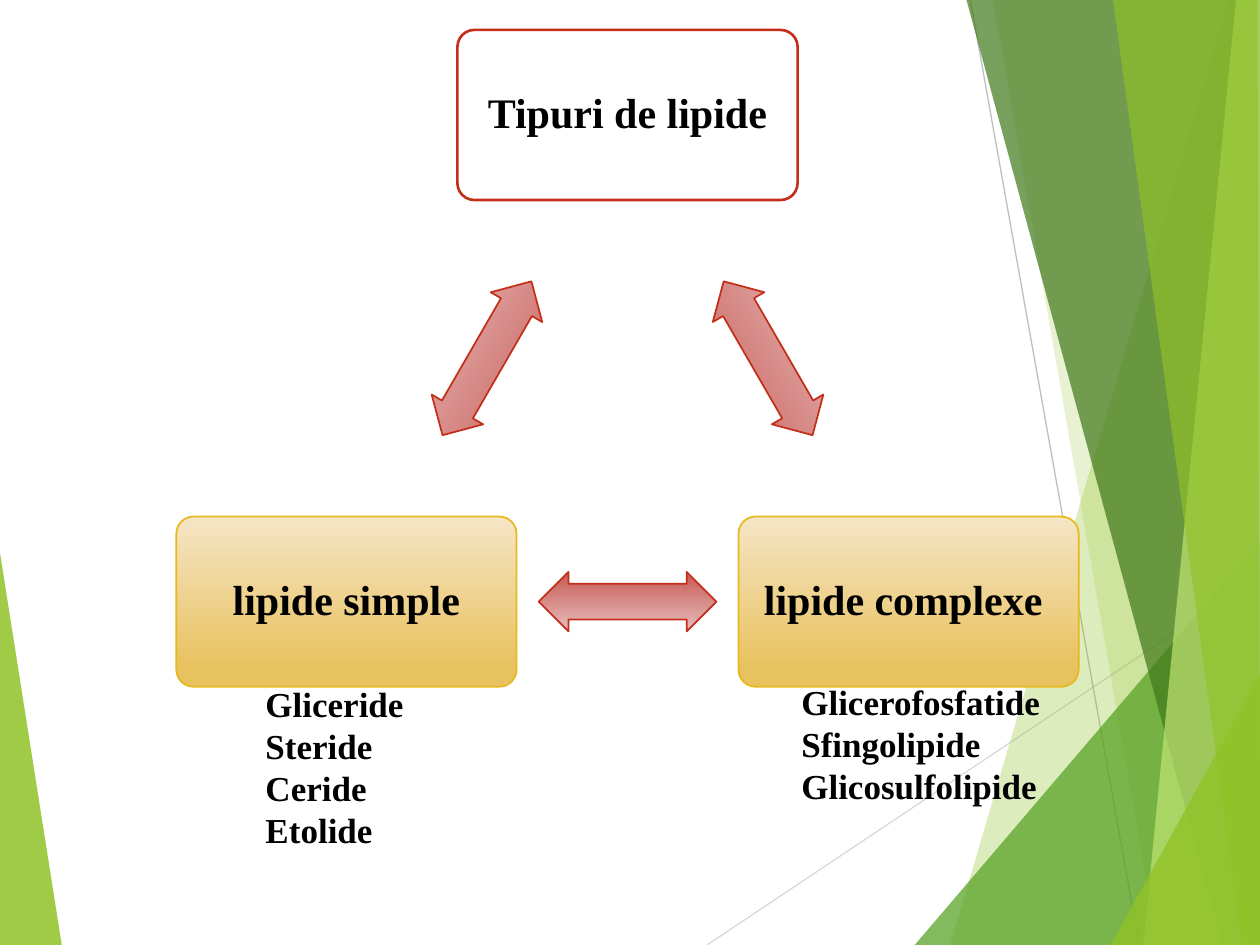
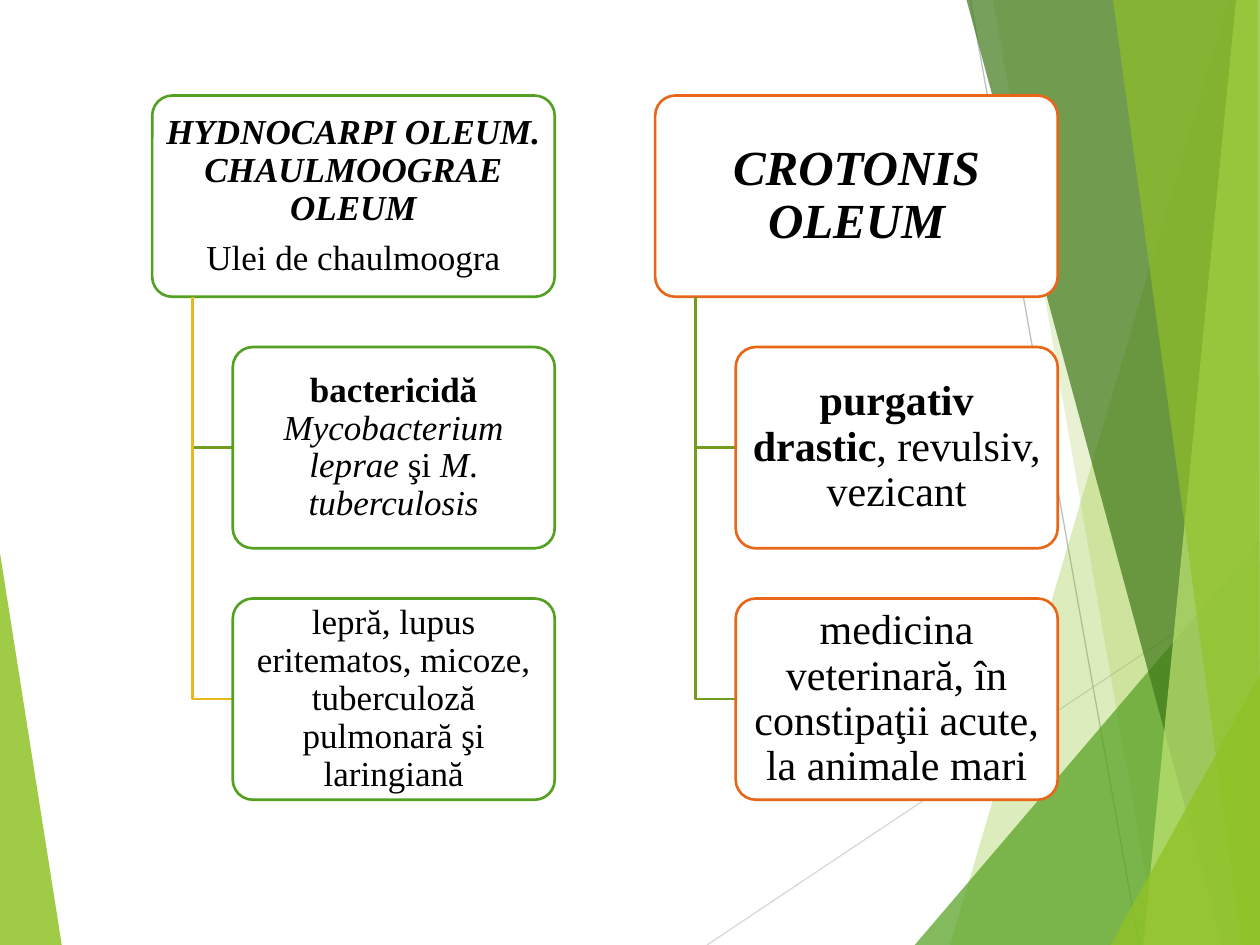
from lxml.etree import SubElement
from pptx import Presentation
from pptx.dml.color import RGBColor
from pptx.enum.shapes import MSO_CONNECTOR, MSO_SHAPE
from pptx.enum.text import MSO_ANCHOR, MSO_AUTO_SIZE, PP_ALIGN
from pptx.oxml.ns import qn
from pptx.util import Pt

FONT = "Times New Roman"
BLACK = RGBColor(0x00, 0x00, 0x00)
WHITE = RGBColor(0xFF, 0xFF, 0xFF)
LIME = RGBColor(0x90, 0xC2, 0x26)
PALE_LIME = RGBColor(0xC0, 0xE4, 0x74)
GREEN = RGBColor(0x54, 0xA0, 0x21)
DARK_GREEN = RGBColor(0x3F, 0x78, 0x19)
OLIVE = RGBColor(0x73, 0x9B, 0x1E)
ORANGE = RGBColor(0xE7, 0x66, 0x18)
RED = RGBColor(0xC4, 0x2F, 0x1A)
GOLD = RGBColor(0xE6, 0xB9, 0x1E)
LIGHT_GRAY = RGBColor(0xD9, 0xD9, 0xD9)
GRAY = RGBColor(0xBF, 0xBF, 0xBF)
SAND_GRADIENT = (RGBColor(0xF5, 0xE5, 0xC5), RGBColor(0xE9, 0xC2, 0x60))
ROSE_GRADIENT = (RGBColor(0xE6, 0xBF, 0xBE), RGBColor(0xCB, 0x65, 0x60))

# Shared background: rays (start, end, colour) and facets (colour, opacity %, corners)
WIDTH, HEIGHT = 720, 540
RAYS = [
    ((404, HEIGHT), (WIDTH, 329), LIGHT_GRAY),
    ((554.5, 0), (651, HEIGHT), GRAY),
]
FACETS = [
    (LIME, 85, [(0, 316), (35.3, HEIGHT), (0, HEIGHT)]),
    (LIME, 30, [(702, 0), (543, HEIGHT), (WIDTH, HEIGHT), (WIDTH, 0)]),
    (LIME, 20, [(567.5, 0), (661.5, HEIGHT), (WIDTH, HEIGHT), (WIDTH, 0)]),
    (GREEN, 72, [(522.7, HEIGHT), (WIDTH, 309), (WIDTH, HEIGHT)]),
    (DARK_GREEN, 70, [(552.3, 0), (698.5, HEIGHT), (WIDTH, HEIGHT), (WIDTH, 0)]),
    (PALE_LIME, 70, [(706.3, 0), (653.3, HEIGHT), (WIDTH, HEIGHT), (WIDTH, 0)]),
    (LIME, 65, [(636, 0), (709.7, HEIGHT), (WIDTH, HEIGHT), (718.6, 0)]),
    (LIME, 80, [(634.7, HEIGHT), (WIDTH, 385.5), (WIDTH, HEIGHT)]),
]

# Lipid types: two lists below a triangle of boxes
TITLE = "Tipuri de lipide"
SIMPLE, COMPLEX = "lipide simple", "lipide complexe "
SIMPLE_LIST = ["Gliceride", "Steride", "Ceride", "Etolide"]
COMPLEX_LIST = ["Glicerofosfatide", "Sfingolipide", "Glicosulfolipide"]

# Oils: each box holds paragraphs of (text, style), style from "b" and "i"
OILS = [
    {"colour": GREEN, "links": (OLIVE, GOLD), "boxes": [
        (20, [[("HYDNOCARPI OLEUM. CHAULMOOGRAE OLEUM", "bi")],
              [("Ulei de chaulmoogra", "")]]),
        (20, [[("bactericidă ", "b"), ("Mycobacterium leprae", "i"), (" şi ", ""),
               ("M", "i"), (". ", ""), ("tuberculosis", "i")]]),
        (20, [[("lepră, lupus eritematos, micoze, tuberculoză pulmonară "
                "şi laringiană", "")]]),
    ]},
    {"colour": ORANGE, "links": (OLIVE, OLIVE), "boxes": [
        (28, [[("CROTONIS OLEUM", "bi")]]),
        (24, [[("purgativ drastic", "b"), (", revulsiv, vezicant", "")]]),
        (24, [[("medicina veterinară, în constipaţii acute, la animale mari", "")]]),
    ]},
]


def add_path(page, points, close):
    (x, y), *others = [(Pt(x), Pt(y)) for x, y in points]
    builder = page.shapes.build_freeform(x, y, scale=1.0)
    builder.add_line_segments(others, close=close)
    shape = builder.convert_to_shape()
    shape.shadow.inherit = False
    return shape


def add_background(page, master):
    """Draw the rays and facets, then hand them to the master."""
    parts = []
    for start, end, colour in RAYS:
        ray = page.shapes.add_connector(
            MSO_CONNECTOR.STRAIGHT, *[Pt(value) for value in start + end])
        ray.line.color.rgb = colour
        ray.line.width = Pt(0.75)
        SubElement(ray.element.spPr, qn("a:effectLst"))
        parts.append(ray)
    for colour, opacity, corners in FACETS:
        facet = add_path(page, corners, close=True)
        facet.fill.solid()
        facet.fill.fore_color.rgb = colour
        tint = facet.element.spPr.find(".//" + qn("a:srgbClr"))
        SubElement(tint, qn("a:alpha"), val=str(opacity * 1000))
        facet.line.fill.background()
        parts.append(facet)
    # The left facet lies behind the rays
    parts.insert(0, parts.pop(len(RAYS)))
    for part in parts:
        master.shapes.element.append(part.element)


def add_block(page, kind, left, top, width, height, adjustments, line, weight,
              gradient=None):
    shape = page.shapes.add_shape(kind, Pt(left), Pt(top), Pt(width), Pt(height))
    for index, value in enumerate(adjustments):
        shape.adjustments[index] = value
    shape.shadow.inherit = False
    shape.line.color.rgb = line
    shape.line.width = Pt(weight)
    if gradient:
        shape.fill.gradient()
        shape.fill.gradient_angle = 270
        for stop, colour, position in zip(shape.fill.gradient_stops, gradient, (0, 0.88)):
            stop.color.rgb = colour
            stop.position = position
    else:
        shape.fill.solid()
        shape.fill.fore_color.rgb = WHITE
    return shape


def write(shape, paragraphs, size, margins, align=PP_ALIGN.CENTER,
          anchor=MSO_ANCHOR.MIDDLE, spacing=0.9, gap=0):
    frame = shape.text_frame
    frame.word_wrap = True
    frame.auto_size = MSO_AUTO_SIZE.NONE
    frame.vertical_anchor = anchor
    frame.margin_left = frame.margin_right = Pt(margins[0])
    frame.margin_top = frame.margin_bottom = Pt(margins[1])
    for number, spans in enumerate(paragraphs):
        para = frame.paragraphs[0] if number == 0 else frame.add_paragraph()
        para.alignment = align
        para.line_spacing = spacing
        para.space_before = Pt(gap if number else 0)
        para.font.name = FONT
        para.font.size = Pt(size)
        para.font.color.rgb = BLACK
        for text, style in spans:
            span = para.add_run()
            span.text = text
            span.font.name = FONT
            span.font.size = Pt(size)
            span.font.color.rgb = BLACK
            span.font.bold = "b" in style
            span.font.italic = "i" in style


def place(page, holder, left, top, width, height):
    """Move a placeholder and bring it to the front."""
    holder.left, holder.top = Pt(left), Pt(top)
    holder.width, holder.height = Pt(width), Pt(height)
    page.shapes.element.append(holder.element)


def build_types(page):
    box_width, box_height = 194.4, 97.2
    top, right, left = (358.6, 65.7), (519.2, 343.8), (198, 343.8)

    # Boxes at the corners of the triangle
    for (x, y), text, line, weight, gradient in [
            (top, None, RED, 1.5, None),
            (right, COMPLEX, GOLD, 1, SAND_GRADIENT),
            (left, SIMPLE, GOLD, 1, SAND_GRADIENT)]:
        box = add_block(page, MSO_SHAPE.ROUNDED_RECTANGLE, x - box_width / 2,
                        y - box_height / 2, box_width, box_height, [0.1],
                        line, weight, gradient)
        if text:
            write(box, [[(text, "b")]], 24, (7.2, 7.2))

    # Arrows halfway between corners
    arrow_width, arrow_height = 101.5, 34
    for start, end, angle in [(top, right, 60), (right, left, 180), (left, top, 300)]:
        x, y = [(a + b) / 2 for a, b in zip(start, end)]
        arrow = add_block(page, MSO_SHAPE.LEFT_RIGHT_ARROW, x - arrow_width / 2,
                          y - arrow_height / 2, arrow_width, arrow_height,
                          [0.6, 0.5], RED, 1, ROSE_GRADIENT)
        arrow.rotation = angle

    # Title and lists
    title = page.shapes.title
    place(page, title, top[0] - box_width / 2, top[1] - box_height / 2,
          box_width, box_height)
    write(title, [[(TITLE, "b")]], 24, (7.2, 7.2))
    for index, items, x, y, width in [(1, SIMPLE_LIST, 144.5, 386.6, 100),
                                      (2, COMPLEX_LIST, 450.7, 385, 165)]:
        body = page.placeholders[index]
        place(page, body, x, y, width, 24 * len(items) + 8)
        write(body, [[(item, "b")] for item in items], 20, (7.2, 3.6),
              PP_ALIGN.LEFT, MSO_ANCHOR.TOP, spacing=1.0)
        for para in body.text_frame.paragraphs:
            settings = para._p.get_or_add_pPr()
            settings.set("marL", "0")
            settings.set("indent", "0")
            SubElement(settings, qn("a:buNone"))
            # Bullet settings come before the default run settings
            settings.append(settings.find(qn("a:defRPr")))


def build_oils(page):
    first_left, first_top, column_step, row_step = 87, 54.6, 287.4, 143.7
    head_width, box_height = 230, 115
    indent, trunk = 46, 23
    for column, oil in enumerate(OILS):
        left = first_left + column * column_step
        for row, (size, paragraphs) in enumerate(oil["boxes"]):
            top = first_top + row * row_step
            shift = indent if row else 0
            # Elbow from the heading to the box
            if row:
                middle = top + box_height / 2
                link = add_path(page, [(left + trunk, first_top + box_height),
                                       (left + trunk, middle),
                                       (left + indent, middle)], close=False)
                link.fill.background()
                link.line.color.rgb = oil["links"][row - 1]
                link.line.width = Pt(1.5)
            box = add_block(page, MSO_SHAPE.ROUNDED_RECTANGLE, left + shift, top,
                            head_width - shift, box_height, [0.1], oil["colour"], 1.5)
            write(box, paragraphs, size, (size * 0.15, size * 0.1), gap=7)


def main():
    deck = Presentation()
    deck.slide_width, deck.slide_height = Pt(WIDTH), Pt(HEIGHT)
    two_content, blank = deck.slide_layouts[3], deck.slide_layouts[6]
    types_page = deck.slides.add_slide(two_content)
    add_background(types_page, deck.slide_master)
    build_types(types_page)
    build_oils(deck.slides.add_slide(blank))
    deck.save("out.pptx")


if __name__ == "__main__":
    main()
